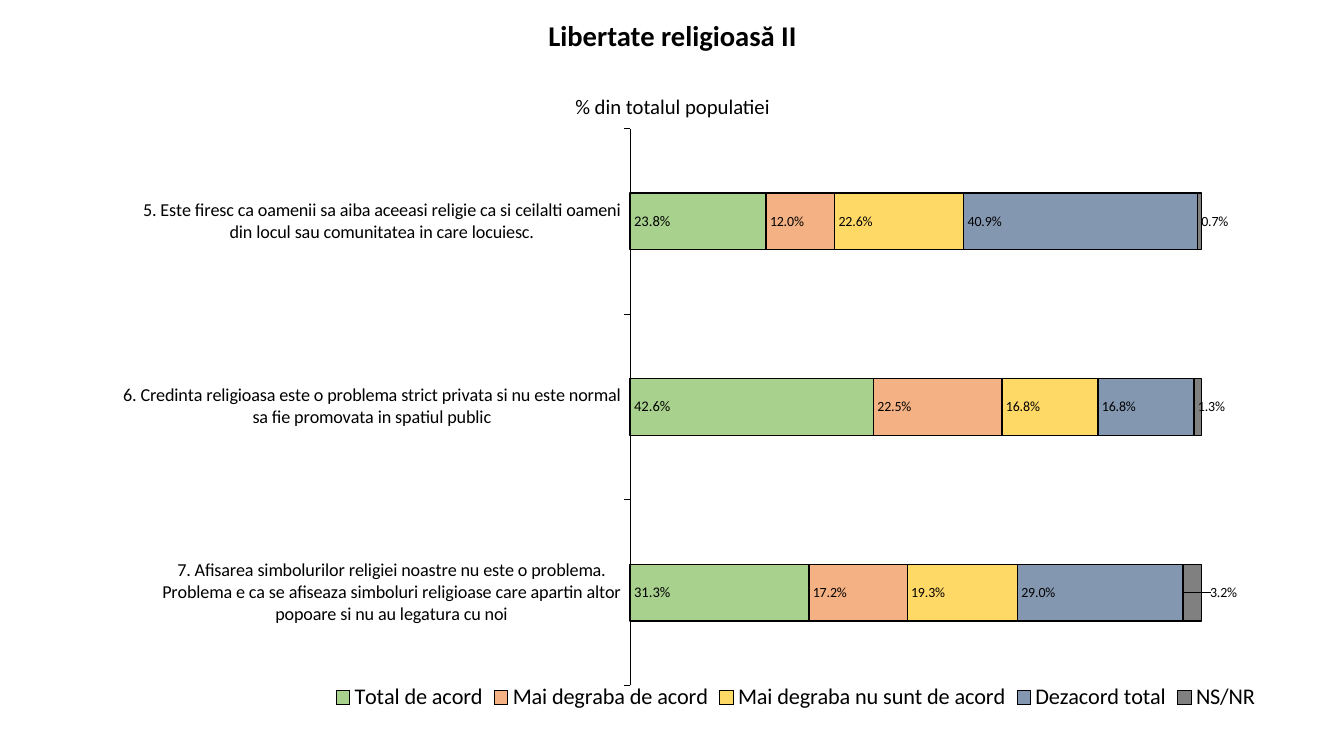
import pptx
import pptx.chart.data
import pptx.dml.color
import pptx.enum.chart
import pptx.enum.text
import pptx.oxml
import pptx.oxml.ns
import pptx.util

Inches = pptx.util.Inches
COLORS = {"text": "000000", "agree": "A9D18E", "rather_agree": "F4B183",
          "rather_disagree": "FFD966", "disagree": "8497B0", "no_answer": "808080"}
PERCENT = "0.0%"

STATEMENTS = [
    "5. Este firesc ca oamenii sa aiba aceeasi religie ca si ceilalti oameni "
    "din locul sau comunitatea in care locuiesc.",
    "6. Credinta religioasa este o problema strict privata si nu este normal "
    "sa fie promovata in spatiul public",
    "7. Afisarea simbolurilor religiei noastre nu este o problema. Problema e ca se "
    "afiseaza simboluri religioase care apartin altor popoare si nu au legatura cu noi",
]
# Name, color, share per statement, label size
ANSWERS = [
    ("Total de acord", "agree", (0.238, 0.426, 0.313), 10.5),
    ("Mai degraba de acord", "rather_agree", (0.12, 0.225, 0.172), 10),
    ("Mai degraba nu sunt de acord", "rather_disagree", (0.226, 0.168, 0.193), 10),
    ("Dezacord total", "disagree", (0.409, 0.168, 0.29), 10),
    ("NS/NR", "no_answer", (0.007, 0.013, 0.032), 10),
]


def apply(target, **values):
    for name, value in values.items():
        setattr(target, name, value)


def set_layout(parent, index, **values):
    """Place a chart element by fractions of the chart area."""
    for old in parent.findall(pptx.oxml.ns.qn("c:layout")):
        parent.remove(old)
    items = "".join(f'<c:{tag} val="{value}"/>' for tag, value in values.items())
    parent.insert(index, pptx.oxml.parse_xml(
        f'<c:layout {pptx.oxml.ns.nsdecls("c")}><c:manualLayout>{items}'
        "</c:manualLayout></c:layout>"))


class SlideBuilder:
    font = "Calibri"

    def __init__(self, slide):
        self.slide = slide

    def color(self, name):
        return pptx.dml.color.RGBColor.from_string(COLORS[name])

    def style(self, font, size, bold=False):
        apply(font, name=self.font, size=pptx.util.Pt(size), bold=bold)
        font.color.rgb = self.color("text")

    def outline(self, line, width):
        line.color.rgb = self.color("text")
        line.width = pptx.util.Pt(width)

    def title(self, lines, left, top, width, height):
        box = self.slide.shapes.title
        apply(box, left=Inches(left), top=Inches(top),
              width=Inches(width), height=Inches(height))
        frame = box.text_frame
        apply(frame, word_wrap=True, auto_size=pptx.enum.text.MSO_AUTO_SIZE.NONE,
              vertical_anchor=pptx.enum.text.MSO_ANCHOR.BOTTOM)
        for index, (text, size, bold, spacing, before) in enumerate(lines):
            para = frame.add_paragraph() if index else frame.paragraphs[0]
            apply(para, alignment=pptx.enum.text.PP_ALIGN.CENTER, line_spacing=spacing,
                  space_before=pptx.util.Pt(before), space_after=pptx.util.Pt(0))
            span = para.add_run()
            span.text = text
            self.style(span.font, size, bold)

    def stacked_chart(self, left, top, width, height):
        data = pptx.chart.data.CategoryChartData(number_format=PERCENT)
        data.categories = STATEMENTS
        for name, _, values, _ in ANSWERS:
            data.add_series(name, values)
        chart = self.slide.shapes.add_chart(
            pptx.enum.chart.XL_CHART_TYPE.BAR_STACKED_100, Inches(left), Inches(top),
            Inches(width), Inches(height), data).chart
        chart.has_title = False
        self.style(chart.font, 10)
        plot = chart.plots[0]
        apply(plot, gap_width=227, overlap=100, vary_by_categories=False)
        for series, answer in zip(plot.series, ANSWERS):
            self.series(series, answer[1], answer[3])
        self.axes(chart)
        self.legend(chart)
        # The last label stands just right of its narrow bar
        label = plot.series[-1].points[2].data_label
        self.style(label.font, 10)
        label.position = pptx.enum.chart.XL_LABEL_POSITION.INSIDE_BASE
        set_layout(chart.element.xpath(".//c:dLbl")[0], 1, x=0.02, y=0)
        set_layout(chart.element.xpath(".//c:plotArea")[0], 0, layoutTarget="inner",
                   xMode="edge", yMode="edge", x=0.436, y=0.021, w=0.497, h=0.924)

    def series(self, series, color, label_size):
        series.format.fill.solid()
        series.format.fill.fore_color.rgb = self.color(color)
        self.outline(series.format.line, 1)
        labels = series.data_labels
        apply(labels, show_value=True, number_format=PERCENT, number_format_is_linked=False,
              position=pptx.enum.chart.XL_LABEL_POSITION.INSIDE_BASE)
        self.style(labels.font, label_size)

    def axes(self, chart):
        ticks = pptx.enum.chart.XL_TICK_MARK
        axis = chart.category_axis
        apply(axis, reverse_order=True, has_major_gridlines=False,
              major_tick_mark=ticks.OUTSIDE, minor_tick_mark=ticks.NONE)
        self.style(axis.tick_labels.font, 13)
        self.outline(axis.format.line, 0.75)
        apply(chart.value_axis, visible=False, has_major_gridlines=False,
              minimum_scale=0, maximum_scale=1, major_unit=0.5)

    def legend(self, chart):
        chart.has_legend = True
        apply(chart.legend, include_in_layout=False,
              position=pptx.enum.chart.XL_LEGEND_POSITION.RIGHT)
        self.style(chart.legend.font, 16)
        set_layout(chart.element.xpath(".//c:legend")[0], 1, xMode="edge",
                   yMode="edge", x=0.17, y=0.93, w=0.82, h=0.07)


def main():
    deck = pptx.Presentation()
    apply(deck, slide_width=Inches(13.33), slide_height=Inches(7.5))
    page = SlideBuilder(deck.slides.add_slide(deck.slide_layouts[5]))

    # Answers by statement
    page.stacked_chart(1.22, 1.15, 11.46, 5.98)

    # Title and unit line: text, size, bold, line spacing, space before
    page.title([("Libertate religioasă II", 20.4, True, 0.87, 0),
                ("% din totalul populatiei", 14.8, False, 0.7, 34)],
               0.36, 0.11, 12.62, 1.11)

    deck.save("out.pptx")


if __name__ == "__main__":
    main()
